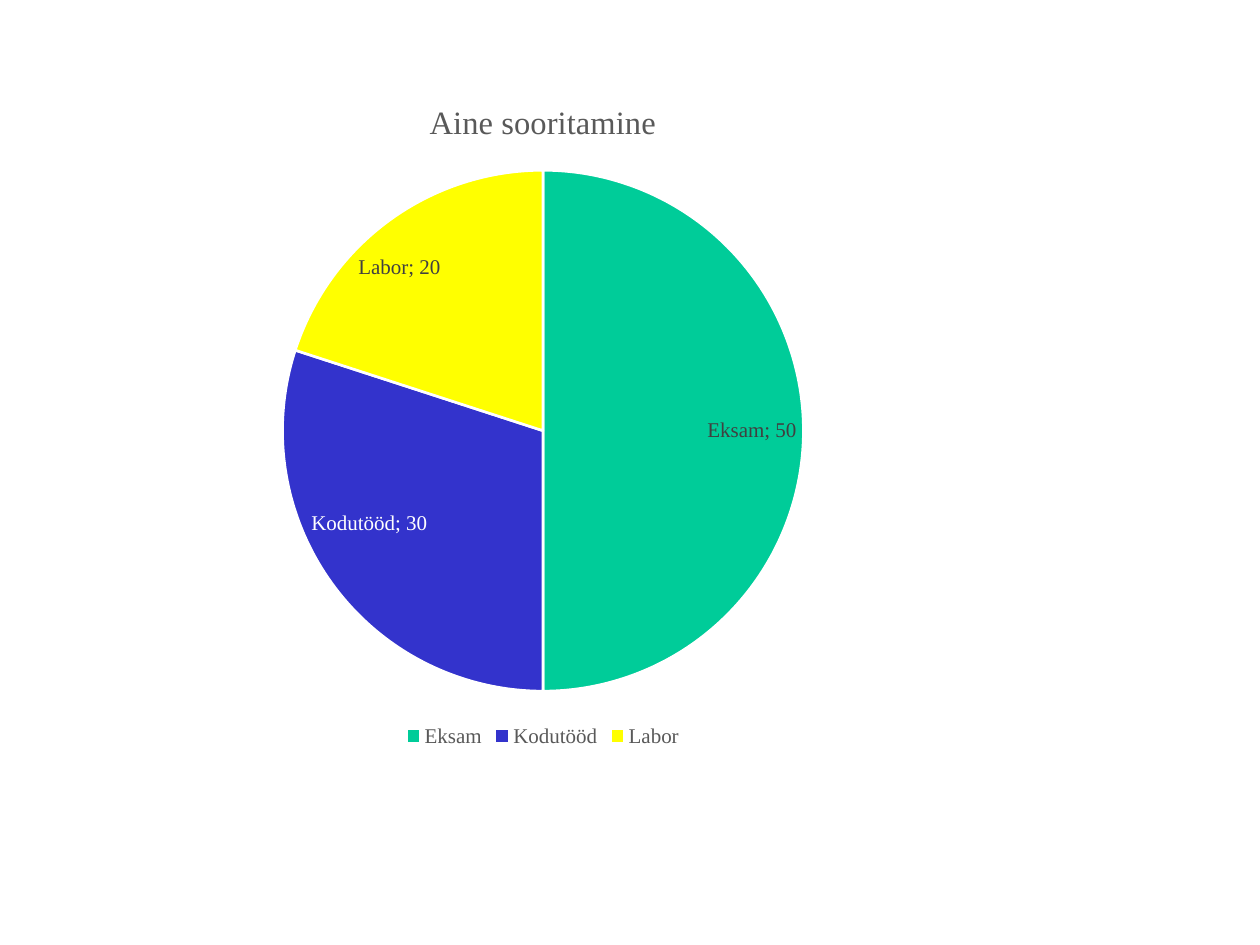
from lxml import etree
from pptx import Presentation
from pptx.chart.data import CategoryChartData
from pptx.dml.color import RGBColor
from pptx.enum.chart import XL_CHART_TYPE, XL_LABEL_POSITION, XL_LEGEND_POSITION
from pptx.oxml.ns import qn
from pptx.util import Inches, Pt

PIE = XL_CHART_TYPE.PIE
FIT = XL_LABEL_POSITION.BEST_FIT
BOTTOM = XL_LEGEND_POSITION.BOTTOM

FONT = "Times New Roman"
COLORS = {"green": "00CC99", "blue": "3333CC", "yellow": "FFFF00",
          "gray": "595959", "dark": "404040", "white": "FFFFFF"}
TITLE = "Aine sooritamine"
PARTS = [("Eksam", 50, "green"), ("Kodutööd", 30, "blue"), ("Labor", 20, "yellow")]
LIGHT = 1  # slice whose label is white
FRAME = (0.28, 0.6, 8.06, 5.37)
PLOT = {"x": 0.24, "y": 0.14, "w": 0.52, "h": 0.77}


def rgb(name):
    return RGBColor.from_string(COLORS[name])


def style(font, size, color):
    font.name = FONT
    font.size = Pt(size)
    font.color.rgb = rgb(color)


def place_plot(chart):
    """Fix the inner plot area as fractions of the chart."""
    area = chart._chartSpace.find(".//" + qn("c:plotArea"))
    for old in area.findall(qn("c:layout")):
        area.remove(old)
    layout = etree.Element(qn("c:layout"))
    area.insert(0, layout)
    manual = etree.SubElement(layout, qn("c:manualLayout"))
    rules = [("layoutTarget", "inner"), ("xMode", "edge"), ("yMode", "edge")]
    for tag, val in rules + list(PLOT.items()):
        etree.SubElement(manual, qn("c:" + tag)).set("val", str(val))


def show_names(series):
    """Show category and value, split by a semicolon, in every label."""
    for flag in list(series._element.iter(qn("c:showCatName"))):
        flag.set("val", "1")
    for flag in list(series._element.iter(qn("c:showBubbleSize"))):
        mark = etree.Element(qn("c:separator"))
        mark.text = "; "
        flag.addnext(mark)


prs = Presentation()
prs.slide_width, prs.slide_height = Inches(10), Inches(7.5)
slide = prs.slides.add_slide(prs.slide_layouts[6])

data = CategoryChartData()
data.categories = [name for name, _, _ in PARTS]
data.add_series("Series 1", [val for _, val, _ in PARTS])
chart = slide.shapes.add_chart(PIE, *map(Inches, FRAME), data).chart
chart.font.name = FONT
chart.font.size = Pt(10)

chart.has_title = True
frame = chart.chart_title.text_frame
frame.text = TITLE
font = frame.paragraphs[0].runs[0].font
style(font, 18.6, "gray")
font.bold = False

chart.has_legend = True
chart.legend.position = BOTTOM
chart.legend.include_in_layout = False
style(chart.legend.font, 12, "gray")

plot = chart.plots[0]
plot.vary_by_categories = True
series = plot.series[0]
for i, (_, _, color) in enumerate(PARTS):
    look = series.points[i].format
    look.fill.solid()
    look.fill.fore_color.rgb = rgb(color)
    look.line.color.rgb = rgb("white")
    look.line.width = Pt(1.5)

labels = series.data_labels
labels.show_value = True
labels.position = FIT
style(labels.font, 12, "dark")
label = series.points[LIGHT].data_label
style(label.font, 12, "white")
label.position = FIT
show_names(series)
place_plot(chart)

prs.save("out.pptx")
